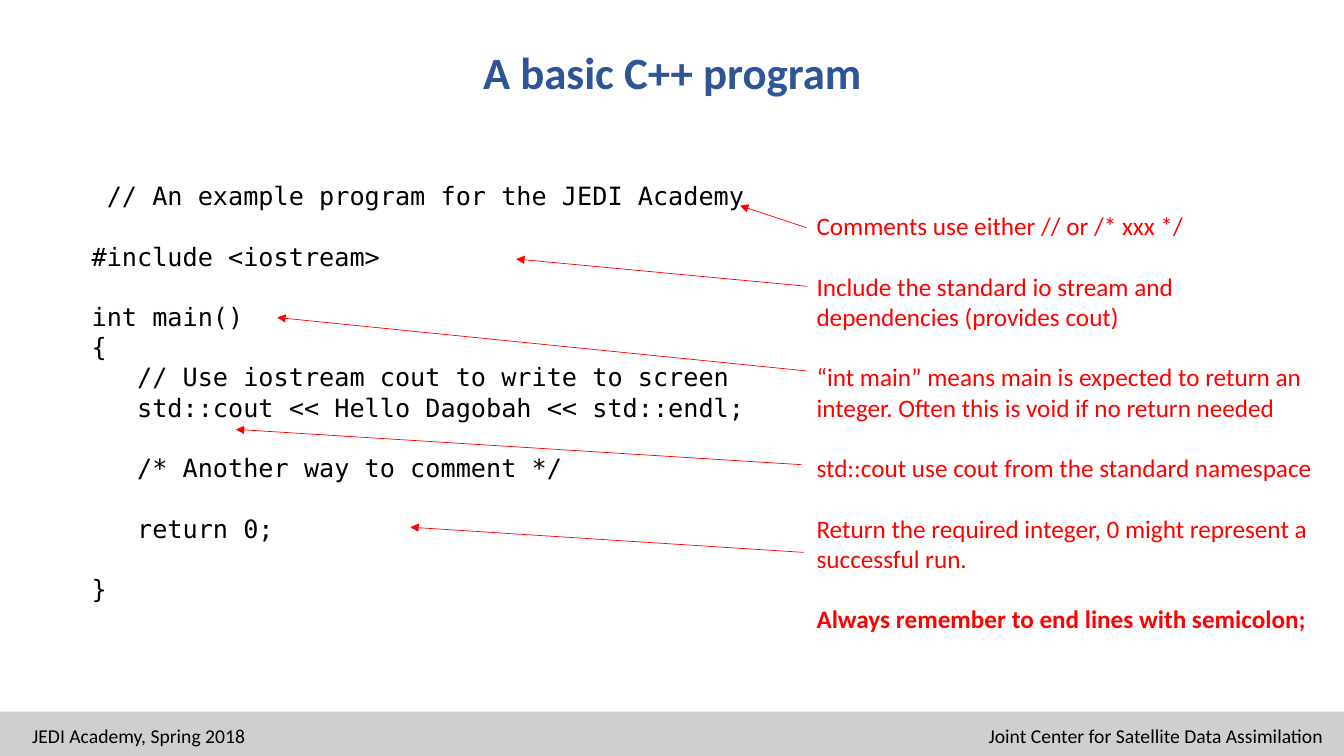
from lxml import etree
from pptx import Presentation
from pptx.dml.color import RGBColor
from pptx.enum import shapes, text
from pptx.oxml import ns
from pptx.util import Inches, Pt

COLORS = {"title": "2F5597", "code": "000000", "note": "FF0000",
          "band": "D0CECE", "footer": "000000"}
BODY_FONT = "Calibri"
CODE_FONT = "DejaVu Sans Mono"
LINE_PITCH = Pt(21.6)

CODE_GROUPS = [
    [" // An example program for the JEDI Academy"],
    ["#include <iostream>"],
    ["int main()", "{",
     "   // Use iostream cout to write to screen",
     "   std::cout << Hello Dagobah << std::endl;"],
    ["   /* Another way to comment */"],
    ["   return 0;"],
    ["}"],
]
NOTE_GROUPS = [
    ["Comments use either // or /* xxx */"],
    ["Include the standard io stream and dependencies (provides cout)"],
    ["“int main” means main is expected to return an integer. "
     "Often this is void if no return needed"],
    ["std::cout use cout from the standard namespace"],
    ["Return the required integer, 0 might represent a successful run."],
    ["Always remember to end lines with semicolon;"],
]
ARROWS = [
    ((7.19, 0.52), (6.53, 0.30)),
    ((7.19, 1.10), (4.31, 0.83)),
    ((7.19, 1.94), (1.94, 1.41)),
    ((7.14, 2.87), (1.53, 2.52)),
    ((7.16, 3.74), (3.26, 3.49)),
]


def color(name):
    """Return the named palette colour."""
    return RGBColor.from_string(COLORS[name])


def style_font(font, name, size, color_name, bold=False):
    """Set typeface, size, colour and weight."""
    font.name, font.size, font.bold = name, Pt(size), bold
    font.color.rgb = color(color_name)


def add_text_frame(slide, left, top, width, height):
    """Add a wrapping text box, in inches, and return its text frame."""
    frame = slide.shapes.add_textbox(
        Inches(left), Inches(top), Inches(width), Inches(height)).text_frame
    frame.word_wrap = True
    return frame


def add_line_groups(slide, box, groups, font_name, color_name):
    """Write groups of lines, one line pitch apart, and return the paragraphs."""
    frame = add_text_frame(slide, *box)
    paragraphs = []
    for group in groups:
        for index, line in enumerate(group):
            paragraph = frame.add_paragraph() if paragraphs else frame.paragraphs[0]
            paragraph.text = line
            paragraph.line_spacing = LINE_PITCH
            if paragraphs and index == 0:
                paragraph.space_before = LINE_PITCH
            style_font(paragraph.font, font_name, 18, color_name)
            paragraphs.append(paragraph)
    return paragraphs


def add_arrow(slide, start, end):
    """Draw a thin arrow between two points in inches."""
    arrow = slide.shapes.add_connector(
        shapes.MSO_CONNECTOR.STRAIGHT, *map(Inches, start + end))
    arrow.line.color.rgb = color("note")
    arrow.line.width = Pt(0.5)
    line = arrow.line._get_or_add_ln()
    etree.SubElement(line, ns.qn("a:tailEnd"), type="triangle")
    etree.SubElement(arrow._element.spPr, ns.qn("a:effectLst"))


def add_title(slide, left, top, width, height):
    """Place and format the title."""
    title = slide.shapes.title
    title.left, title.top = Inches(left), Inches(top)
    title.width, title.height = Inches(width), Inches(height)
    frame = title.text_frame
    frame.text = "A basic C++ program"
    frame.vertical_anchor = text.MSO_ANCHOR.MIDDLE
    frame.auto_size = text.MSO_AUTO_SIZE.NONE
    paragraph = frame.paragraphs[0]
    paragraph.alignment = text.PP_ALIGN.CENTER
    paragraph.line_spacing = 0.9
    style_font(paragraph.font, BODY_FONT, 32, "title", bold=True)


def add_annotated_code(slide, left, top, width, height):
    """Place the program, its notes and the arrows between them."""
    code_box = (left, top, 7.75, height - 0.3)
    note_box = (left + 7.19, top + 0.3, width - 7.19, height - 0.3)
    add_line_groups(slide, code_box, CODE_GROUPS, CODE_FONT, "code")
    notes = add_line_groups(slide, note_box, NOTE_GROUPS, BODY_FONT, "note")
    notes[-1].font.bold = True
    for arrow in ARROWS:
        start, end = [(left + x, top + y) for x, y in arrow]
        add_arrow(slide, start, end)


def add_footer(slide, left, top, width, height):
    """Draw the footer band with a label at each end."""
    band = slide.shapes.add_shape(
        shapes.MSO_SHAPE.RECTANGLE,
        Inches(left), Inches(top), Inches(width), Inches(height))
    band.shadow.inherit = False
    band.fill.solid()
    band.fill.fore_color.rgb = color("band")
    band.line.fill.background()
    label_width = 4.89
    labels = [
        ("JEDI Academy, Spring 2018", left + 0.22, text.PP_ALIGN.LEFT),
        ("Joint Center for Satellite Data Assimilation",
         left + width - label_width - 0.11, text.PP_ALIGN.RIGHT),
    ]
    for label, label_left, alignment in labels:
        frame = add_text_frame(slide, label_left, top + 0.07, label_width, 0.34)
        paragraph = frame.paragraphs[0]
        paragraph.text = label
        paragraph.alignment = alignment
        style_font(paragraph.font, BODY_FONT, 14, "footer")


def main():
    """Build and save the presentation."""
    presentation = Presentation()
    presentation.slide_width = Inches(13.33)
    presentation.slide_height = Inches(7.5)
    slide = presentation.slides.add_slide(presentation.slide_layouts[5])
    add_footer(slide, 0, 7.06, 13.33, 0.44)
    add_title(slide, 1.34, 0.29, 10.66, 0.91)
    add_annotated_code(slide, 0.81, 1.74, 12.34, 4.64)
    presentation.save("out.pptx")


if __name__ == "__main__":
    main()
